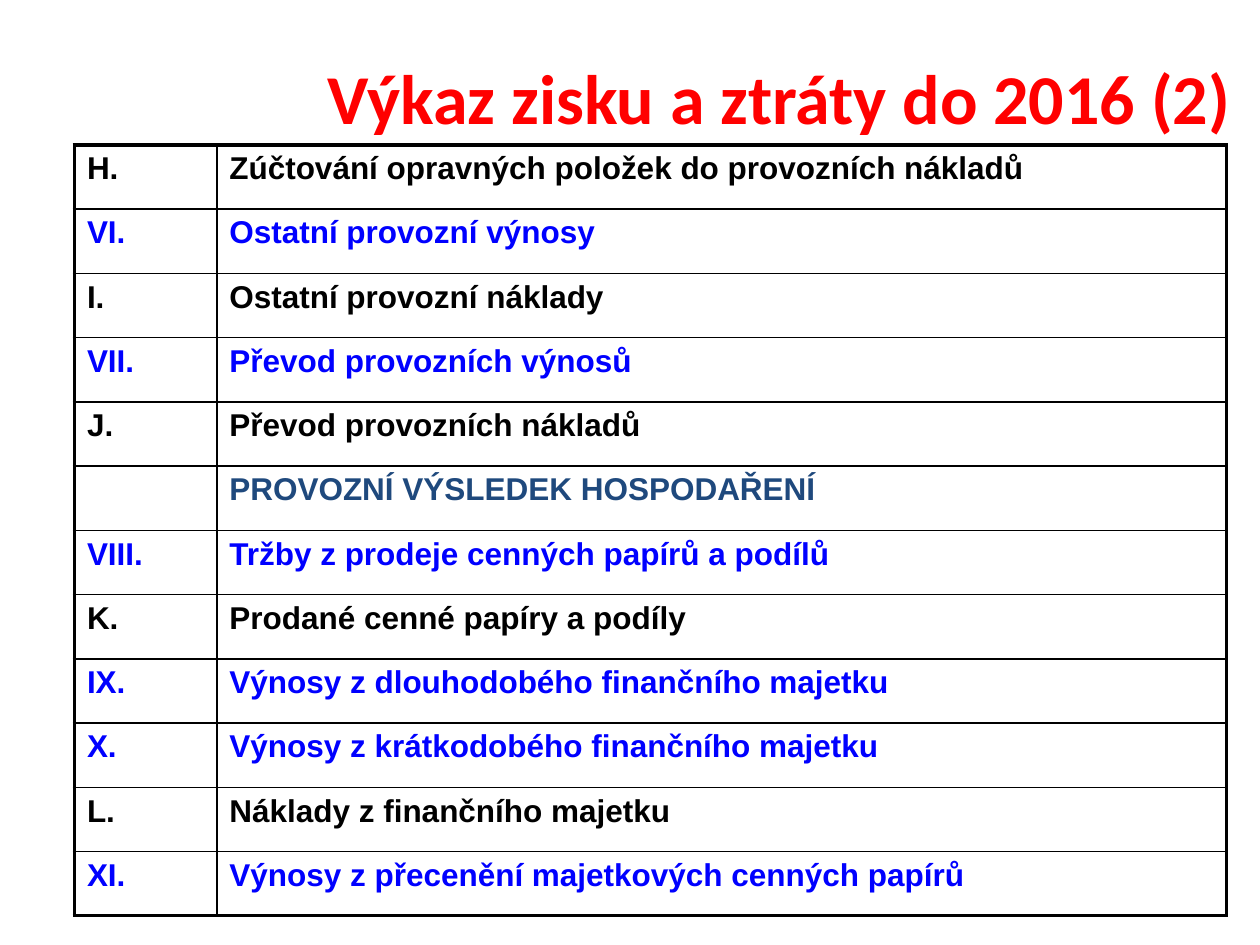
"""Build a slide with the second part of a Czech profit and loss statement."""
from dataclasses import dataclass

from lxml import etree
from pptx import Presentation
from pptx.dml.color import RGBColor
from pptx.enum.text import MSO_ANCHOR, PP_ALIGN
from pptx.oxml.ns import qn
from pptx.slide import Slide
from pptx.table import _Cell
from pptx.text.text import _Paragraph
from pptx.util import Cm, Pt

CENTER = PP_ALIGN.CENTER
MIDDLE = MSO_ANCHOR.MIDDLE
COLORS = {
    "title": "FF0000",
    "cost": "000000",
    "revenue": "0000FF",
    "result": "1F497D",
    "border": "000000",
}
OUTER, INNER = Pt(2.25), Pt(1)


@dataclass(frozen=True)
class Item:
    mark: str
    label: str
    kind: str


ITEMS = [
    Item("H.", "Zúčtování opravných položek do provozních nákladů", "cost"),
    Item("VI.", "Ostatní provozní výnosy", "revenue"),
    Item("I.", "Ostatní provozní náklady", "cost"),
    Item("VII.", "Převod provozních výnosů", "revenue"),
    Item("J.", "Převod provozních nákladů", "cost"),
    Item("", "PROVOZNÍ VÝSLEDEK HOSPODAŘENÍ", "result"),
    Item("VIII.", "Tržby z prodeje cenných papírů a podílů", "revenue"),
    Item("K.", "Prodané cenné papíry a podíly", "cost"),
    Item("IX.", "Výnosy z dlouhodobého finančního majetku", "revenue"),
    Item("X.", "Výnosy z krátkodobého finančního majetku", "revenue"),
    Item("L.", "Náklady z finančního majetku", "cost"),
    Item("XI.", "Výnosy z přecenění majetkových cenných papírů", "revenue"),
]


def set_font(paragraph: _Paragraph, name: str, size: int, color: str) -> None:
    """Make the paragraph bold in the given font, size and colour."""
    font = paragraph.font
    font.name, font.size, font.bold = name, Pt(size), True
    font.color.rgb = RGBColor.from_string(COLORS[color])


def set_borders(cell: _Cell, widths: dict[str, int]) -> None:
    """Draw solid cell borders, one width for each side."""
    properties = cell._tc.get_or_add_tcPr()
    for side, width in widths.items():
        line = etree.SubElement(properties, qn(f"a:ln{side}"), w=str(width))
        fill = etree.SubElement(line, qn("a:solidFill"))
        etree.SubElement(fill, qn("a:srgbClr"), val=COLORS["border"])


def add_title(slide: Slide, text: str) -> None:
    """Place and format the slide title."""
    title = slide.shapes.title
    title.left, title.top = Cm(4.27), Cm(0.36)
    title.width, title.height = Cm(22.86), Cm(3.18)
    frame = title.text_frame
    frame.text = text
    frame.vertical_anchor = MIDDLE
    frame.paragraphs[0].alignment = CENTER
    set_font(frame.paragraphs[0], "Calibri", 40, "title")


def add_statement(slide: Slide, items: list[Item]) -> None:
    """Add the table of statement items with a thick outer frame."""
    statement = slide.shapes.add_table(
        len(items), 2, Cm(1.5), Cm(2.92), Cm(23.22), Cm(15.54)
    ).table
    statement.first_row = statement.horz_banding = False
    statement.columns[0].width = Cm(2.87)
    statement.columns[1].width = Cm(20.35)
    last = len(items) - 1
    for row, item in enumerate(items):
        for column, text in enumerate((item.mark, item.label)):
            cell = statement.cell(row, column)
            set_borders(cell, {
                "L": OUTER if column == 0 else INNER,
                "R": OUTER if column == 1 else INNER,
                "T": OUTER if row == 0 else INNER,
                "B": OUTER if row == last else INNER,
            })
            cell.fill.background()
            cell.text = text
            set_font(cell.text_frame.paragraphs[0], "Arial", 18, item.kind)


def main() -> None:
    """Build and save the presentation."""
    presentation = Presentation()
    presentation.slide_width, presentation.slide_height = Cm(25.4), Cm(19.05)
    slide = presentation.slides.add_slide(presentation.slide_layouts[5])
    add_title(slide, "Výkaz zisku a ztráty do 2016 (2)")
    add_statement(slide, ITEMS)
    presentation.save("out.pptx")


if __name__ == "__main__":
    main()
